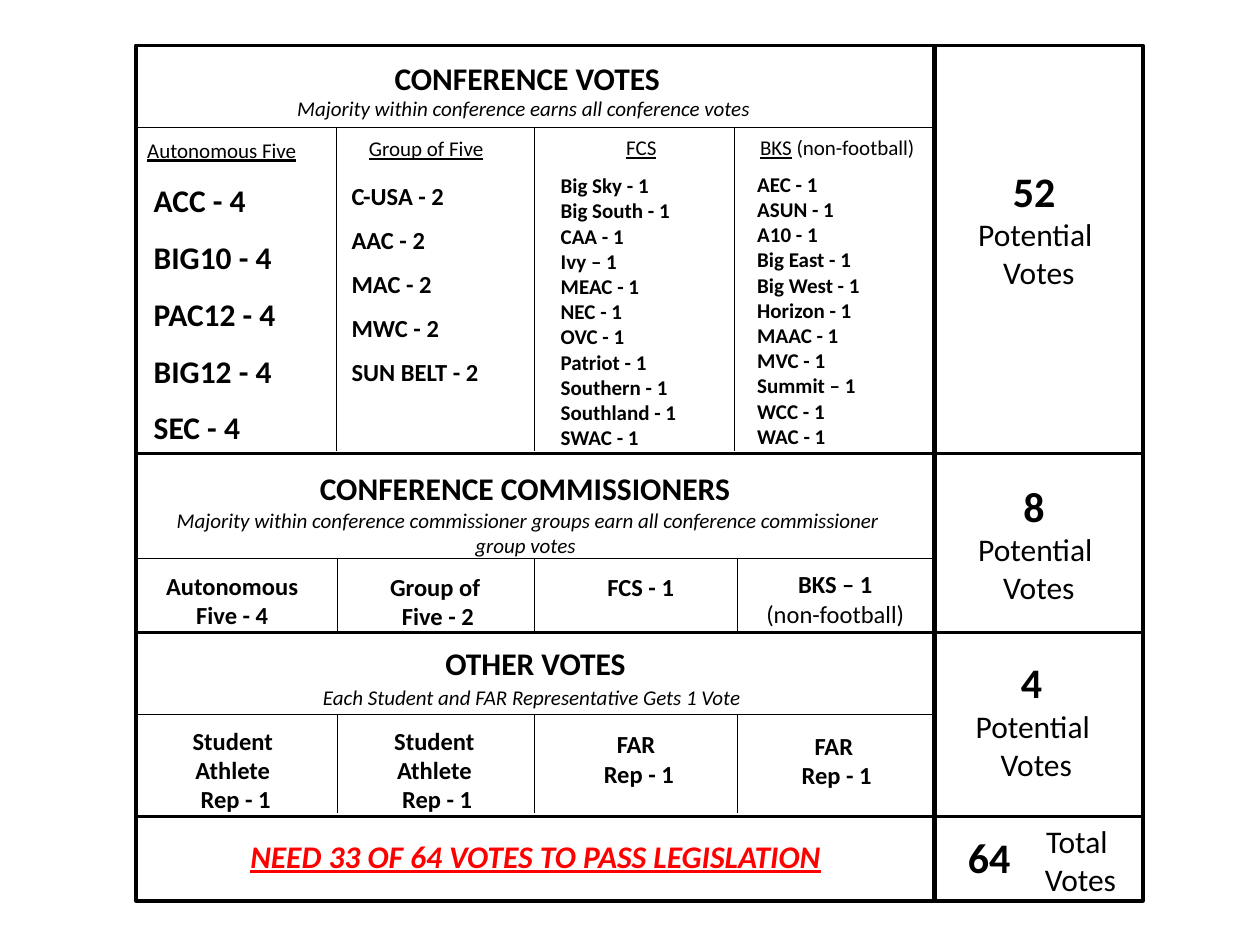
from pptx import Presentation
from pptx.dml.color import RGBColor
from pptx.enum.shapes import MSO_CONNECTOR as Conn, MSO_SHAPE as Kind
from pptx.enum.text import MSO_ANCHOR as Anchor, MSO_AUTO_SIZE as Fit, PP_ALIGN as Align
from pptx.util import Pt
from pptx.oxml.ns import qn
from lxml.etree import SubElement

SCALE = 9144
BLACK, RED = "000000", "FF0000"
HEAD = dict(size=18, bold=True)
NOTE = dict(size=12, italic=True)
LABEL = dict(size=12, underline=True)
CELL = dict(size=14, bold=True)
PLAIN = dict(size=18, bold=False)
COUNT = dict(size=24, bold=True)
CALL = dict(size=18, bold=True, italic=True, underline=True, color=RED)


def px(*vals):
    return [v * SCALE for v in vals]


def hue(code):
    return RGBColor.from_string(code)


class Board:
    """Draws styled text, lists, frames and rules on one slide."""

    font = "Calibri"

    def __init__(self, deck, layout):
        self.slide = deck.slides.add_slide(layout)
        self.shapes = self.slide.shapes

    def style(self, font, fmt):
        font.name = self.font
        font.color.rgb = hue(fmt.get("color", BLACK))
        for key, val in fmt.items():
            if key != "color":
                setattr(font, key, Pt(val) if key == "size" else val)

    def fill(self, shape, lines, fmt, align, anchor=Anchor.TOP, gap=1.0):
        frame = shape.text_frame
        frame.word_wrap = True
        frame.auto_size = Fit.SHAPE_TO_FIT_TEXT
        frame.vertical_anchor = anchor
        for i, line in enumerate(lines):
            para = frame.add_paragraph() if i else frame.paragraphs[0]
            props = para._p.get_or_add_pPr()
            props.set("marL", "0")
            props.set("indent", "0")
            SubElement(props, qn("a:buNone"))
            para.alignment, para.line_spacing, para.space_before = align, gap, Pt(0)
            for text, look in [(line, fmt)] if isinstance(line, str) else line:
                run = para.add_run()
                run.text = text
                self.style(run.font, look)

    def text(self, box, lines, fmt, align=Align.CENTER, anchor=Anchor.TOP):
        self.fill(self.shapes.add_textbox(*px(*box)), lines, fmt, align, anchor)

    def place(self, shape, box):
        for name, val in zip(("left", "top", "width", "height"), px(*box)):
            setattr(shape, name, val)

    def title(self, box, text):
        shape = self.shapes.title
        self.place(shape, box)
        self.fill(shape, [text], HEAD, Align.CENTER)

    def list(self, idx, box, items, size, gap):
        shape = self.slide.placeholders[idx]
        self.place(shape, box)
        self.fill(shape, items, dict(size=size, bold=True), Align.LEFT, gap=gap)

    def frame(self, box):
        shape = self.shapes.add_shape(Kind.RECTANGLE, *px(*box))
        shape.shadow.inherit = False
        shape.fill.background()
        shape.line.color.rgb = hue(BLACK)
        shape.line.width = Pt(2)

    def rule(self, x1, y1, x2, y2, width=0.5):
        line = self.shapes.add_connector(Conn.STRAIGHT, *px(x1, y1, x2, y2))
        line.line.color.rgb = hue(BLACK)
        line.line.width = Pt(width)
        SubElement(line._element.spPr, qn("a:effectLst"))


def main():
    deck = Presentation()
    deck.slide_width, deck.slide_height = px(1000, 750)
    board = Board(deck, deck.slide_layouts.get_by_name("Comparison"))

    for box in [(108, 36, 633, 679), (742, 36, 165, 679)]:
        board.frame(box)
    for y in (360, 502, 648):
        board.rule(107, y, 908, y, 1.75)
    for top, end, cols in [(101, 358, (267, 424, 583)),
                           (443, 502, (268, 424, 585)),
                           (567, 645, (268, 424, 585))]:
        board.rule(108, top, 741, top)
        for x in cols:
            board.rule(x, top, x, end)

    board.title((108, 42, 621, 34), "CONFERENCE VOTES")
    for box, line, fmt in [
        ((108, 71, 619, 30), "Majority within conference earns all conference votes ", NOTE),
        ((109, 367, 621, 34), "CONFERENCE COMMISSIONERS ", HEAD),
        ((109, 398, 620, 50), "Majority within conference commissioner groups earn all "
                              "conference commissioner group votes ", NOTE),
        ((109, 506, 632, 34), "OTHER VOTES", HEAD),
        ((108, 538, 632, 26), "Each Student and FAR Representative Gets 1 Vote ", NOTE),
        ((109, 659, 632, 40), "NEED 33 OF 64 VOTES TO PASS LEGISLATION", CALL),
    ]:
        board.text(box, [line], fmt)

    board.text((107, 104, 164, 30), ["Autonomous Five"], LABEL, Align.LEFT)
    board.text((283, 103, 147, 30), ["Group of Five"], LABEL, Align.LEFT)
    board.text((432, 102, 154, 30), ["FCS"], LABEL)
    board.text((582, 102, 165, 30),
               [[("BKS", LABEL), (" (non-football)", dict(size=12))]], LABEL)

    for idx, (box, items, size, gap) in enumerate([
        ((112, 124, 153, 197),
         ["ACC - 4", "BIG10 - 4", "PAC12 - 4", "BIG12 - 4", "SEC - 4"], 18, 1.5),
        ((269, 127, 160, 155),
         ["C-USA - 2", "AAC - 2", "MAC - 2", "MWC - 2", "SUN BELT - 2"], 14, 1.5),
        ((435, 132, 125, 196),
         ["Big Sky - 1", "Big South - 1", "CAA - 1", "Ivy – 1", "MEAC - 1", "NEC - 1",
          "OVC - 1", "Patriot - 1", "Southern - 1", "Southland - 1", "SWAC - 1"], 12, 1.0),
        ((591, 131, 123, 196),
         ["AEC - 1", "ASUN - 1", "A10 - 1", "Big East - 1", "Big West - 1", "Horizon - 1",
          "MAAC - 1", "MVC - 1", "Summit – 1", "WCC - 1", "WAC - 1"], 12, 1.0),
    ], 1):
        board.list(idx, box, items, size, gap)

    student = ["Student ", "Athlete ", "Rep - 1"]
    far = ["FAR ", "Rep - 1"]
    for box, lines in [
        ((108, 448, 157, 48), ["Autonomous ", "Five - 4 "]),
        ((265, 449, 165, 48), ["Group of ", "Five - 2"]),
        ((431, 449, 155, 28), ["FCS - 1"]),
        ((586, 447, 154, 48), ["BKS – 1", [("(non-football)", dict(size=14, bold=False))]]),
        ((110, 571, 154, 68), student),
        ((265, 571, 164, 68), student),
        ((428, 574, 158, 48), far),
        ((588, 575, 152, 48), far),
    ]:
        board.text(box, lines, CELL)

    for x, y, count in [(742, 134, "52 "), (742, 384, "8 "), (740, 524, "4 ")]:
        board.text((x, y, 165, 94), [[(count, COUNT)], "Potential ", "Votes"],
                   PLAIN, anchor=Anchor.MIDDLE)
    board.text((741, 655, 88, 50), ["64"], COUNT, anchor=Anchor.MIDDLE)
    board.text((810, 648, 95, 69), ["Total ", "Votes"], PLAIN, anchor=Anchor.MIDDLE)

    deck.save("out.pptx")


if __name__ == "__main__":
    main()
